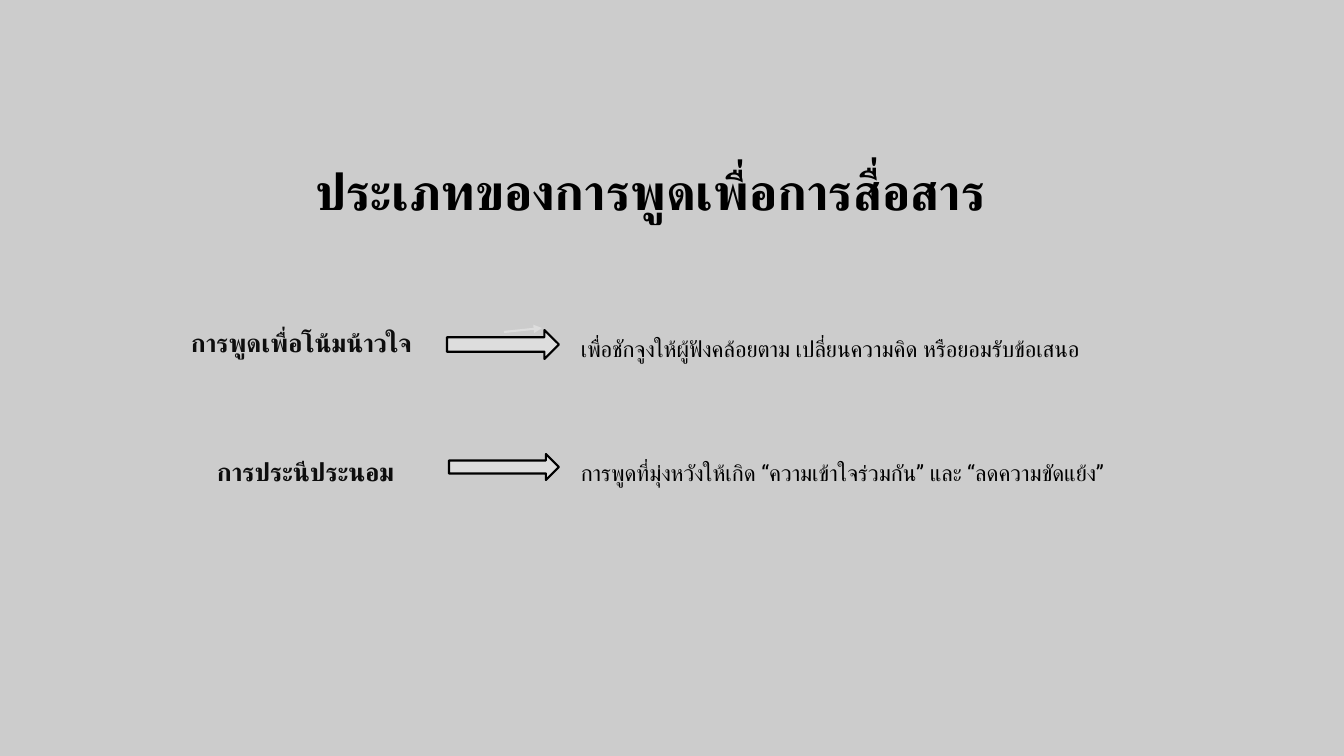
from lxml.etree import SubElement
from pptx import Presentation
from pptx.dml.color import RGBColor
from pptx.enum.shapes import MSO_CONNECTOR, MSO_SHAPE
from pptx.enum.text import MSO_ANCHOR, MSO_AUTO_SIZE, PP_ALIGN
from pptx.oxml.ns import qn
from pptx.util import Pt

PX = 914400 / 100.8


def px(*lengths):
    return [round(n * PX) for n in lengths]


def paint(target, color):
    """Give a fill, line or font a solid colour."""
    if hasattr(target, "solid"):
        target.solid()
        target = target.fore_color
    else:
        target = target.color
    target.rgb = RGBColor.from_string(color)


prs = Presentation()
prs.slide_width, prs.slide_height = px(1344, 756)
s = prs.slides.add_slide(prs.slide_layouts[5])
paint(s.background.fill, "CCCCCC")

# Title, then a bold term and its description in each row
title = s.shapes.title
texts = [
    (title, (305, 155, 856, 72), "ประเภทของการพูดเพื่อการสื่อสาร", 36, True, "000000"),
    (None, (181, 322, 264, 40), "การพูดเพื่อโน้มน้าวใจ", 18, True, "0D0D0D"),
    (None, (571, 330, 672, 37),
     "เพื่อชักจูงให้ผู้ฟังคล้อยตาม เปลี่ยนความคิด หรือยอมรับข้อเสนอ", 16, False, "000000"),
    (None, (207, 451, 672, 40), "การประนีประนอม", 18, True, "0D0D0D"),
    (None, (571, 454, 739, 37),
     "การพูดที่มุ่งหวังให้เกิด “ความเข้าใจร่วมกัน” และ “ลดความขัดแย้ง”", 16, False, "000000"),
]
for sp, box, text, size, bold, color in texts:
    if sp is None:
        sp = s.shapes.add_textbox(*px(*box))
    sp.left, sp.top, sp.width, sp.height = px(*box)
    tf = sp.text_frame
    tf.text = text
    tf.word_wrap = True
    tf.auto_size = MSO_AUTO_SIZE.NONE
    tf.vertical_anchor = MSO_ANCHOR.TOP
    p = tf.paragraphs[0]
    p.alignment = PP_ALIGN.LEFT
    r = p.runs[0]
    r.font.name, r.font.size, r.font.bold = "Roboto", Pt(size), bold
    paint(r.font, color)
    # Thai text takes the complex-script font
    SubElement(r.font._element, qn("a:cs"), typeface="Roboto")

# Thin arrow behind the first block arrow
line = s.shapes.add_connector(MSO_CONNECTOR.STRAIGHT, *px(504, 332, 542, 328))
paint(line.line, "DDDDDD")
line.line.width = Pt(1.5)
SubElement(line.line._get_or_add_ln(), qn("a:tailEnd"), type="triangle")
SubElement(line._element.spPr, qn("a:effectLst"))

# Block arrows from term to description
for box in [(447, 330, 112, 29), (449, 454, 110, 26)]:
    arrow = s.shapes.add_shape(MSO_SHAPE.RIGHT_ARROW, *px(*box))
    arrow.shadow.inherit = False
    paint(arrow.fill, "DDDDDD")
    paint(arrow.line, "000000")
    arrow.line.width = Pt(1.5)

prs.save("out.pptx")
